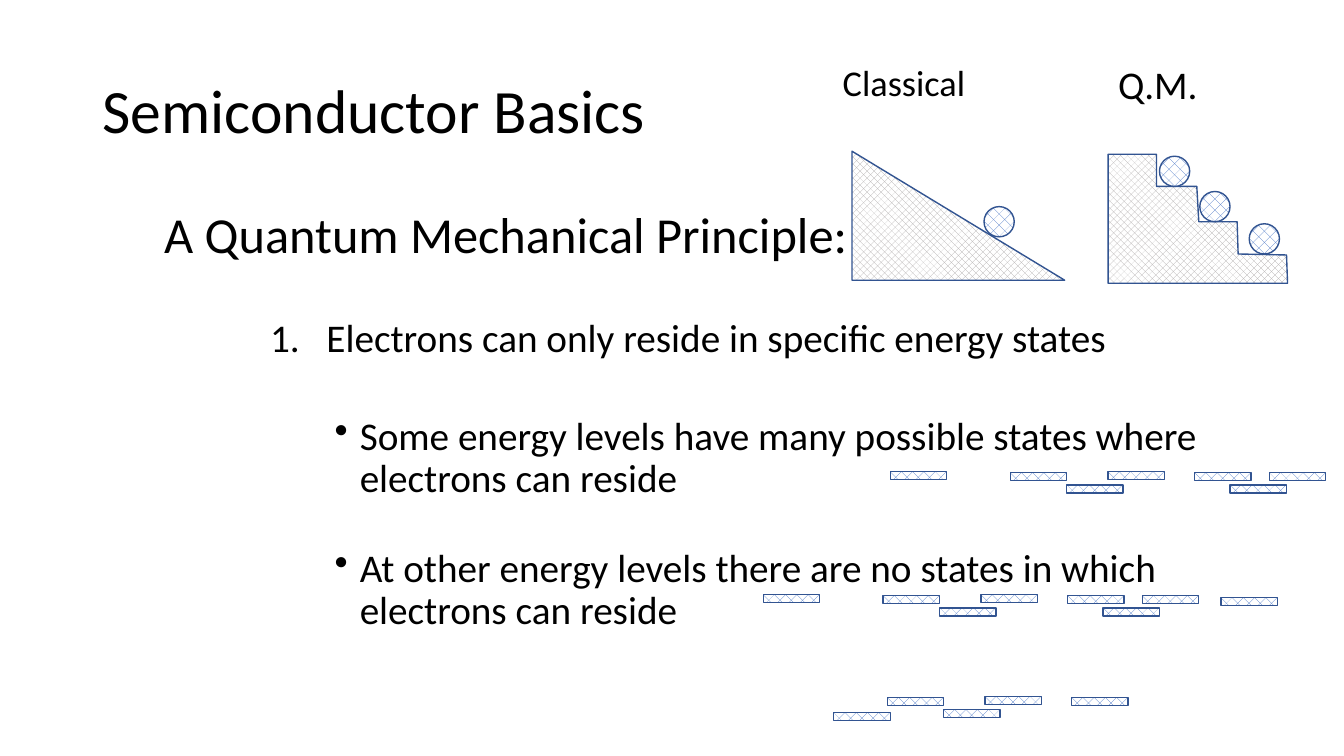
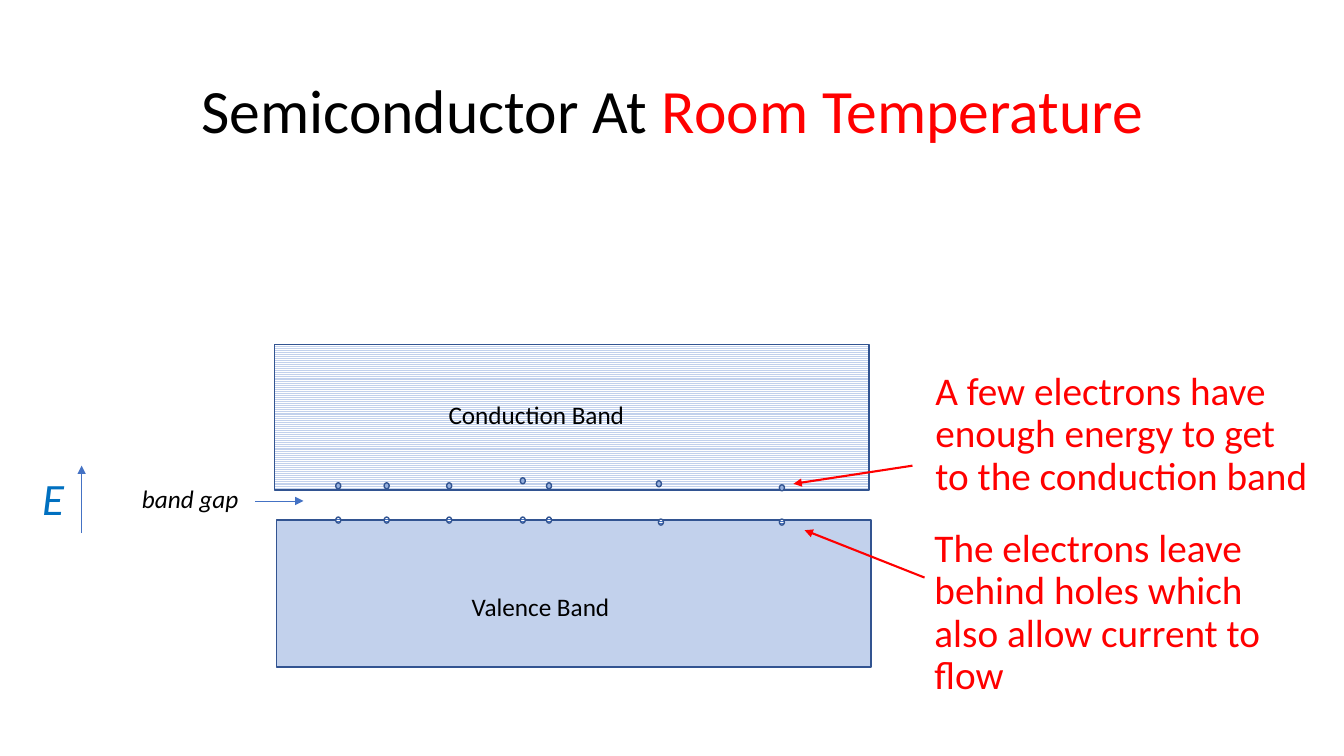
from lxml import etree
from pptx import Presentation
from pptx import util as u
from pptx.dml import color
from pptx.enum import dml, shapes, text
from pptx.oxml import ns

# The grid: 13.33 columns by 7.5 rows
COLUMNS, ROWS = 13.33, 7.5
COLUMN = ROW = u.Inches(1)
FONT = "Calibri"
COLORS = {
    "white": "FFFFFF", "ink": "000000", "accent": "FF0000", "energy": "0070C0",
    "blue": "4472C4", "outline": "325491", "ground": "AFABAB",
    "band": "C2D1EC", "electron": "96B0DE",
}
PATTERN = dml.MSO_PATTERN
SHAPE = shapes.MSO_SHAPE
HATCHED = (PATTERN.PERCENT_25, "blue")
GROUND = (PATTERN.PERCENT_50, "ground")
STRIPED = (PATTERN.NARROW_HORIZONTAL, "band")
HOLE = (PATTERN.LIGHT_HORIZONTAL, "blue")
TITLE_BOX = (0.92, 0.4, 11.5, 1.45)
STATE_SIZE = (0.56, 0.08)
BALL_SIZE = (0.3, 0.3)
DOT_SIZE = (0.05, 0.06)


def rgb(name):
    return color.RGBColor.from_string(COLORS[name])


def grid(*lengths):
    """Turn alternating columns and rows into slide lengths."""
    return [u.Emu(round(length * (ROW if index % 2 else COLUMN)))
            for index, length in enumerate(lengths)]


def paint(shape, fill):
    """Fill with a colour name or a (pattern, colour name) pair, and outline."""
    shape.shadow.inherit = False
    if isinstance(fill, str):
        shape.fill.solid()
        shape.fill.fore_color.rgb = rgb(fill)
    else:
        shape.fill.patterned()
        shape.fill.pattern = fill[0]
        shape.fill.fore_color.rgb = rgb(fill[1])
        shape.fill.back_color.rgb = rgb("white")
    shape.line.color.rgb = rgb("outline")
    shape.line.width = u.Pt(1)
    return shape


def add_figure(holder, kind, at, fill):
    return paint(holder.shapes.add_shape(kind, *grid(*at)), fill)


def add_bullet(para, indent, tag, **attributes):
    properties = para._p.get_or_add_pPr()
    properties.set("marL", str(u.Inches(indent)))
    properties.set("indent", str(-u.Inches(indent)))
    bullet = etree.Element(ns.qn("a:" + tag), attributes)
    defaults = properties.find(ns.qn("a:defRPr"))
    if defaults is None:
        properties.append(bullet)
    else:
        defaults.addprevious(bullet)


def add_text(holder, at, words, size, ink="ink", italic=False, spacing=0.9,
             before=0, middle=False, centred=False):
    """Add one paragraph; words is a string or a list of (words, colour name)."""
    box = holder.shapes.add_textbox(*grid(*at))
    frame = box.text_frame
    frame.word_wrap = True
    if middle:
        frame.vertical_anchor = text.MSO_ANCHOR.MIDDLE
    para = frame.paragraphs[0]
    para.line_spacing = spacing
    para.space_before = u.Pt(before)
    para.alignment = text.PP_ALIGN.CENTER if centred else text.PP_ALIGN.LEFT
    para.font.name = FONT
    para.font.size = u.Pt(size)
    para.font.italic = italic
    if isinstance(words, str):
        para.font.color.rgb = rgb(ink)
        words = [(words, None)]
    for part, part_ink in words:
        span = para.add_run()
        span.text = part
        if part_ink:
            span.font.color.rgb = rgb(part_ink)
    return box


def add_title(page, words, centred=False):
    add_text(page, TITLE_BOX, words, 44, middle=True, centred=centred)


def add_arrow(holder, start, end, ink, width):
    arrow = holder.shapes.add_connector(
        shapes.MSO_CONNECTOR.STRAIGHT, *grid(*start, *end))
    arrow.line.color.rgb = rgb(ink)
    arrow.line.width = u.Pt(width)
    etree.SubElement(arrow.line._get_or_add_ln(), ns.qn("a:tailEnd"), type="triangle")
    etree.SubElement(arrow._element.spPr, ns.qn("a:effectLst"))
    return arrow


def add_slope(page):
    add_text(page, (8.26, 0.6, 1.49, 0.64), "Classical", 25.9, before=10)
    slope = add_figure(page, SHAPE.ISOSCELES_TRIANGLE, (8.45, 1.5, 2.11, 1.28), GROUND)
    slope.adjustments[0] = 0
    add_figure(page, SHAPE.OVAL, (9.76, 2.05, *BALL_SIZE), HATCHED)


def add_stairs(page):
    add_text(page, (10.99, 0.6, 1.49, 0.64), "Q.M.", 28, before=10)
    corners = [(10.99, 2.81), (10.99, 1.53), (11.47, 1.53), (11.47, 1.85),
               (11.87, 1.85), (11.89, 2.2), (12.27, 2.2), (12.28, 2.52),
               (12.76, 2.53), (12.77, 2.81)]
    points = [grid(*corner) for corner in corners]
    outline = page.shapes.build_freeform(*points[0], scale=1.0)
    outline.add_line_segments(points[1:], close=True)
    paint(outline.convert_to_shape(), GROUND)
    for left, top in [(11.5, 1.55), (11.9, 1.9), (12.39, 2.22)]:
        add_figure(page, SHAPE.OVAL, (left, top, *BALL_SIZE), HATCHED)


def add_states(page):
    """Draw three energy levels, each repeating the same cluster of states."""
    cluster = [(0, 0.01), (0.56, 0.13), (0.97, 0), (1.83, 0.01)]
    wide = [(-1.19, 0), *cluster, (2.18, 0.13), (2.57, 0.01)]
    levels = [
        (10.02, 4.68, wide),
        (8.76, 5.9, [*wide, (3.35, 0.03)]),
        (8.8, 6.91, [(-0.53, 0.16), *cluster]),
    ]
    for left, top, states in levels:
        for right_by, down_by in states:
            add_figure(page, SHAPE.RECTANGLE,
                       (left + right_by, top + down_by, *STATE_SIZE), HATCHED)


def build_basics(page):
    add_text(page, (1.53, 1.63, 9.8, 1.45), "A Quantum Mechanical Principle:", 36,
             middle=True)
    point = add_text(page, (2.58, 3.11, 8.76, 0.64),
                     "Electrons can only reside in specific energy states", 28, before=10)
    add_bullet(point.text_frame.paragraphs[0], 0.56, "buAutoNum", type="arabicPeriod")
    add_title(page, "Semiconductor Basics")
    details = [
        "Some energy levels have many possible states where electrons can reside",
        "At other energy levels there are no states in which electrons can reside",
    ]
    for index, words in enumerate(details):
        detail = add_text(page, (3.22, 4.08 + 1.31 * index, 8.76, 1.19), words, 28, before=10)
        add_bullet(detail.text_frame.paragraphs[0], 0.25, "buChar", char="•")
    add_slope(page)
    add_stairs(page)
    add_states(page)


def add_bands(page):
    add_figure(page, SHAPE.RECTANGLE, (2.72, 3.42, 5.9, 1.44), STRIPED)
    add_figure(page, SHAPE.RECTANGLE, (2.74, 5.16, 5.9, 1.46), "band")
    for left, top, words in [(4.35, 3.91, "Conduction Band"), (4.58, 5.82, "Valence Band")]:
        add_text(page, (left, top, 2.21, 0.4), words, 18, spacing=1)
    label = add_text(page, (1.31, 4.75, 1.22, 0.44), "band gap", 18, italic=True, spacing=1)
    arrow = add_arrow(page, (2.53, 4.97), (3.01, 4.97), "blue", 0.5)
    arrow.begin_connect(label, 3)


def add_carriers(page):
    """Pair each hole in the valence band with its electron above."""
    pairs = [(3.33, 5.13, 3.33, 4.79), (3.81, 5.13, 3.81, 4.79),
             (4.43, 5.13, 4.43, 4.79), (5.16, 5.13, 5.16, 4.74),
             (5.42, 5.13, 5.42, 4.79), (6.53, 5.15, 6.51, 4.77),
             (7.73, 5.15, 7.73, 4.81)]
    for pair in pairs:
        group = page.shapes.add_group_shape()
        add_figure(group, SHAPE.OVAL, (*pair[:2], *DOT_SIZE), HOLE)
        add_figure(group, SHAPE.OVAL, (*pair[2:], *DOT_SIZE), "electron")


def add_energy_axis(page):
    group = page.shapes.add_group_shape()
    add_text(group, (0.32, 4.62, 0.59, 0.64), "E", 32, "energy", italic=True, spacing=1)
    add_arrow(group, (0.81, 5.29), (0.81, 4.62), "blue", 1)


def add_callout(page, left, top, words, start, end):
    add_text(page, (left, top, 3.93, 1.45), words, 28, "accent", middle=True)
    add_arrow(page, start, end, "accent", 1.5)


def build_room_temperature(page):
    add_title(page, [("Semiconductor At ", "ink"), ("Room Temperature", "accent")],
              centred=True)
    add_bands(page)
    add_carriers(page)
    add_energy_axis(page)
    add_callout(page, 9.18, 3.59,
                "A few electrons have enough energy to get to the conduction band",
                (9.05, 4.62), (7.87, 4.8))
    add_callout(page, 9.17, 5.36,
                "The electrons leave behind holes which also allow current to flow",
                (9.17, 5.73), (7.98, 5.26))


def main():
    deck = Presentation()
    deck.slide_width, deck.slide_height = grid(COLUMNS, ROWS)
    for build in (build_basics, build_room_temperature):
        build(deck.slides.add_slide(deck.slide_layouts[6]))
    deck.save("out.pptx")


if __name__ == "__main__":
    main()
